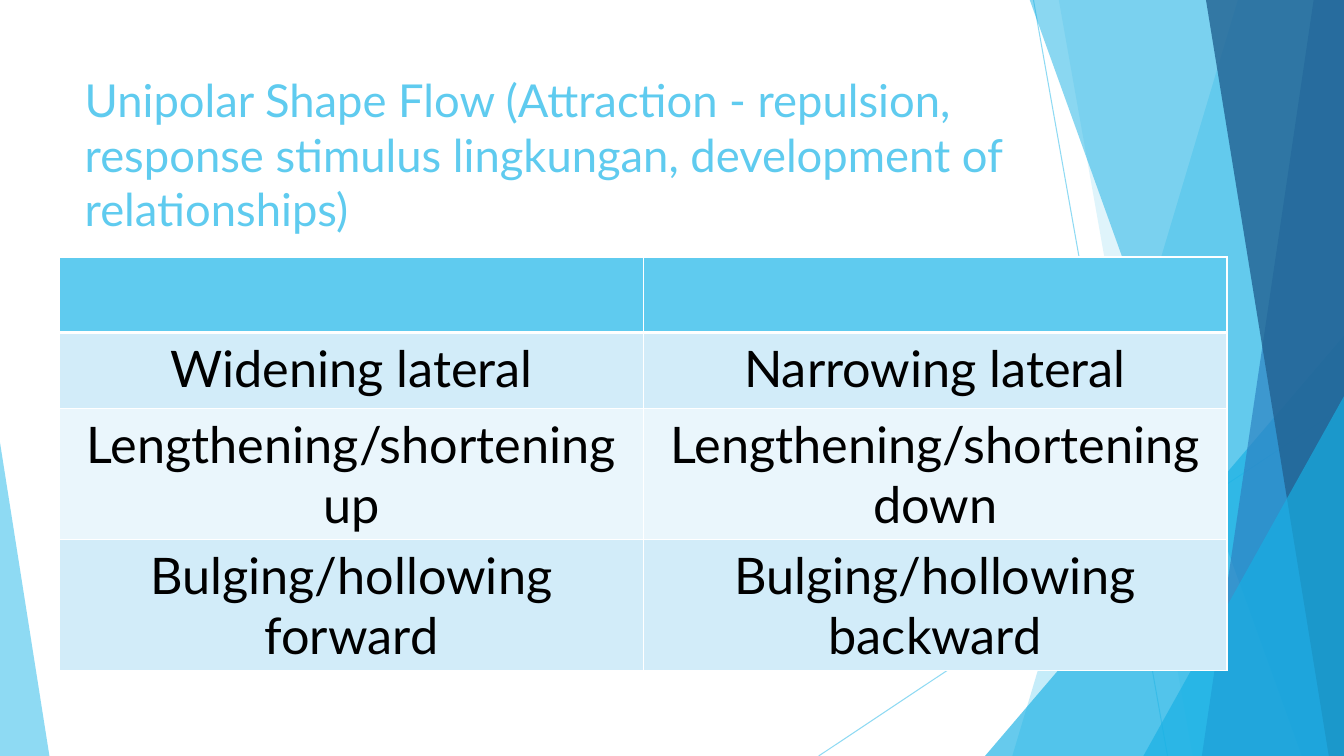
from lxml.etree import SubElement
from pptx import Presentation
from pptx.dml.color import RGBColor
from pptx.enum.shapes import MSO_CONNECTOR as Connector, MSO_SHAPE as Preset
from pptx.enum.text import MSO_ANCHOR as Anchor, MSO_AUTO_SIZE as AutoSize, PP_ALIGN as Align
from pptx.oxml.ns import qn
from pptx.util import Pt

EMU_PER_PX = 9144
WIDTH, HEIGHT = 1333, 750
SKY, CYAN, BLUE, NAVY = "5FCBEF", "17B0E4", "2E83C3", "226292"

HEADING = ("Unipolar Shape Flow (Attraction - repulsion, response stimulus lingkungan, "
           "development of relationships)")
FLOWS = [
    ("", ""),
    ("Widening lateral", "Narrowing lateral"),
    ("Lengthening/shortening up", "Lengthening/shortening down"),
    ("Bulging/hollowing forward", "Bulging/hollowing backward"),
]
ROW_HEIGHTS = [75, 75, 130, 130]
ROW_FILLS = [SKY, "D2ECF9", "EAF6FC", "D2ECF9"]


def px(length):
    return length * EMU_PER_PX


def rgb(color):
    return RGBColor.from_string(color)


def assign(target, values):
    for name, value in values.items():
        setattr(target, name, value)


class FacetSlide:
    """Holds the deck, its current slide and the shared text style."""

    font = "Lato"

    def __init__(self):
        self.deck = Presentation()
        assign(self.deck, {"slide_width": px(WIDTH), "slide_height": px(HEIGHT)})
        self.slide = self.deck.slides.add_slide(self.deck.slide_layouts[5])
        self.shapes = self.slide.shapes

    def fade(self, fill, color, opacity):
        """Apply a solid colour with an opacity in percent."""
        fill.solid()
        fill.fore_color.rgb = rgb(color)
        tint = fill._xPr.find(qn("a:solidFill"))[0]
        SubElement(tint, qn("a:alpha"), val=str(opacity * 1000))

    def ray(self, start, end):
        ray = self.shapes.add_connector(Connector.STRAIGHT, *map(px, start + end))
        ray.line.width = Pt(0.75)
        self.fade(ray.line.fill, SKY, 70)
        SubElement(ray._element.spPr, qn("a:effectLst"))

    def finish(self, facet, color, opacity):
        self.fade(facet.fill, color, opacity)
        facet.line.fill.background()
        facet.shadow.inherit = False

    def band(self, top_left, bottom_left, color, opacity):
        """Draw a full-height facet from a slanted left edge to the slide's right edge."""
        outline = self.shapes.build_freeform(top_left, -1, scale=EMU_PER_PX)
        outline.add_line_segments([(WIDTH, -1), (WIDTH, HEIGHT), (bottom_left, HEIGHT)])
        self.finish(outline.convert_to_shape(), color, opacity)

    def corner(self, left, top, width, apex, color, opacity):
        """Draw a triangle standing on the slide's bottom edge."""
        box = map(px, (left, top, width, HEIGHT - top))
        facet = self.shapes.add_shape(Preset.ISOSCELES_TRIANGLE, *box)
        facet.adjustments[0] = apex
        self.finish(facet, color, opacity)

    def set_text(self, frame, text, size, color, align):
        frame.text = text
        paragraph = frame.paragraphs[0]
        paragraph.alignment = align
        assign(paragraph.font, {"name": self.font, "size": Pt(size)})
        paragraph.font.color.rgb = rgb(color)

    def title(self, text, left, top, width, height):
        title = self.shapes.title
        assign(title, {"left": px(left), "top": px(top),
                       "width": px(width), "height": px(height)})
        assign(title.text_frame, {"word_wrap": True, "auto_size": AutoSize.NONE,
                                  "vertical_anchor": Anchor.TOP})
        self.set_text(title.text_frame, text, 32.4, SKY, Align.LEFT)
        self.shapes._spTree.append(title._element)

    def border(self, cell, top, bottom):
        """Draw white cell edges; top and bottom are widths in points."""
        properties = cell._tc.get_or_add_tcPr()
        for edge, points in {"lnL": 1, "lnR": 1, "lnT": top, "lnB": bottom}.items():
            line = SubElement(properties, qn(f"a:{edge}"), w=str(int(Pt(points))))
            SubElement(SubElement(line, qn("a:solidFill")), qn("a:srgbClr"), val="FFFFFF")

    def table(self, rows, left, top, width):
        box = map(px, (left, top, width, sum(ROW_HEIGHTS)))
        table = self.shapes.add_table(len(rows), len(rows[0]), *box).table
        for r, (texts, height, fill) in enumerate(zip(rows, ROW_HEIGHTS, ROW_FILLS)):
            table.rows[r].height = px(height)
            for c, text in enumerate(texts):
                cell = table.cell(r, c)
                self.border(cell, 3 if r == 1 else 1, 3 if r == 0 else 1)
                cell.fill.solid()
                cell.fill.fore_color.rgb = rgb(fill)
                if text:
                    self.set_text(cell.text_frame, text, 36, "000000", Align.CENTER)


def main():
    page = FacetSlide()
    page.ray((1025, 0), (1158, HEIGHT))
    page.ray((WIDTH, 403), (812, HEIGHT))
    page.band(1228, 1004, SKY, 36)
    page.band(1050, 1183, SKY, 20)
    page.corner(977, 333, 356, 1, CYAN, 66)
    page.band(1021, 1291, CYAN, 50)
    page.band(1303, 1192, BLUE, 70)
    page.band(1196, 1318, NAVY, 80)
    page.corner(1134, 393, 199, 1, CYAN, 66)
    page.corner(0, 439, 49, 0, SKY, 70)
    page.title(HEADING, 74, 67, 940, 144)
    page.table(FLOWS, 59, 255, 1158)
    page.deck.save("out.pptx")


if __name__ == "__main__":
    main()
